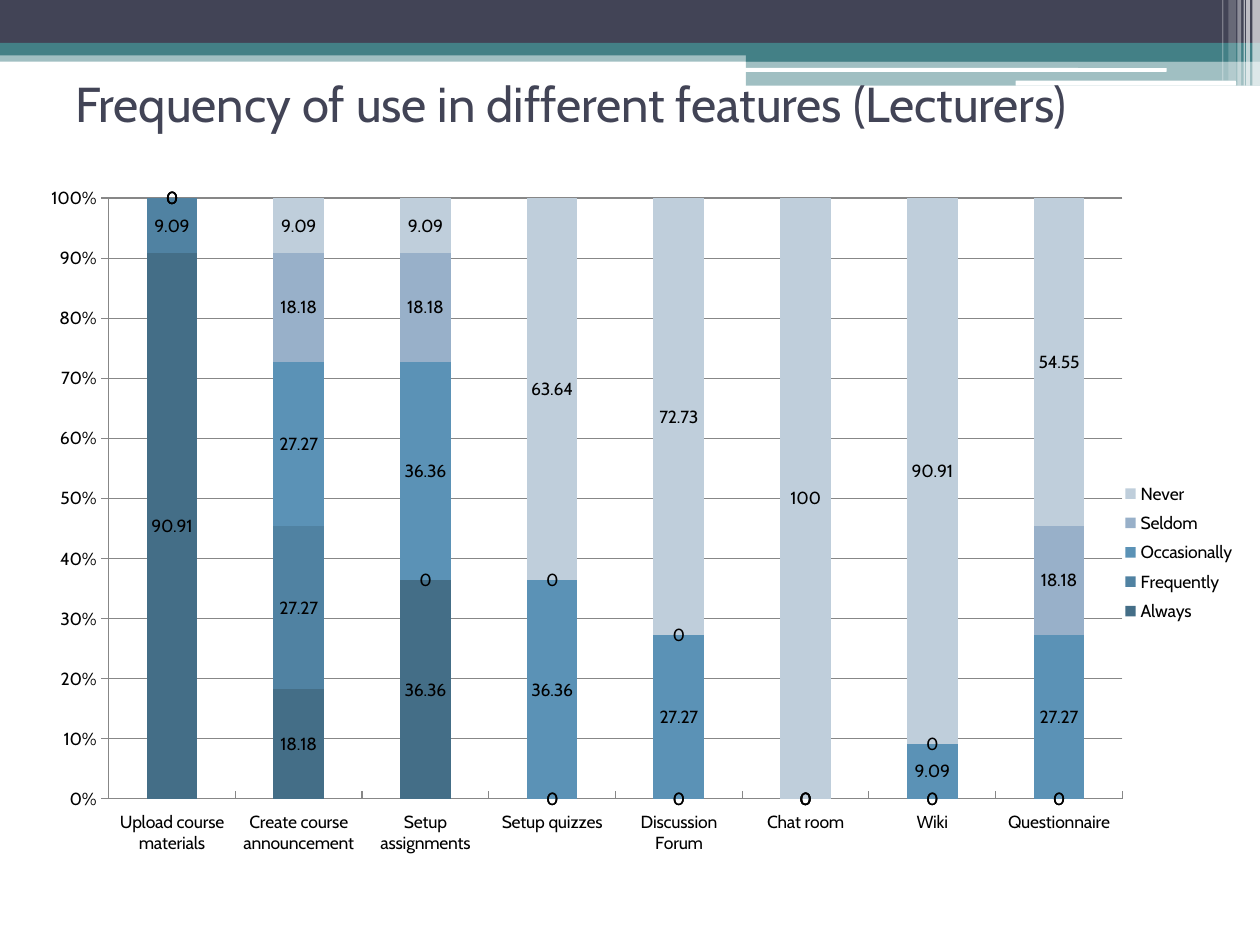
from collections import namedtuple

from lxml import etree
from pptx import Presentation
from pptx.chart.data import CategoryChartData
from pptx.dml.color import RGBColor
from pptx.enum.chart import (XL_CHART_TYPE, XL_LABEL_POSITION, XL_LEGEND_POSITION,
                             XL_TICK_LABEL_POSITION, XL_TICK_MARK)
from pptx.enum.shapes import MSO_SHAPE
from pptx.enum.text import MSO_ANCHOR
from pptx.oxml.ns import qn
from pptx.util import Inches, Pt

RECTANGLE, ROUNDED = MSO_SHAPE.RECTANGLE, MSO_SHAPE.ROUNDED_RECTANGLE
STACKED = XL_CHART_TYPE.COLUMN_STACKED_100
LEGEND_RIGHT = XL_LEGEND_POSITION.RIGHT
LABEL_CENTER = XL_LABEL_POSITION.CENTER
LABELS_LOW = XL_TICK_LABEL_POSITION.LOW
TICK_IN, TICK_OUT, TICK_NONE = XL_TICK_MARK.INSIDE, XL_TICK_MARK.OUTSIDE, XL_TICK_MARK.NONE
MIDDLE = MSO_ANCHOR.MIDDLE

# The slide is a grid of 1000 columns by 750 rows
COLUMNS, ROWS = 1000, 750
CELL = Inches(0.01)
FONT = "Cabin"
COLORS = {
    "navy": "424456", "teal": "438086", "white": "FFFFFF", "black": "000000", "line": "878787",
    "Always": "446E87", "Frequently": "5082A2", "Occasionally": "5B92B6",
    "Seldom": "98B0C9", "Never": "BFCEDB",
}
Box = namedtuple("Box", "left top width height")

CATEGORIES = ["Upload course materials", "Create course announcement", "Setup assignments",
              "Setup quizzes", "Discussion Forum", "Chat room", "Wiki", "Questionnaire"]
SERIES = {
    "Always": [90.91, 18.18, 36.36, 0, 0, 0, 0, 0],
    "Frequently": [9.09, 27.27, 0, 0, 0, 0, 0, 0],
    "Occasionally": [0, 27.27, 36.36, 36.36, 27.27, 0, 9.09, 27.27],
    "Seldom": [0, 18.18, 18.18, 0, 0, 0, 0, 18.18],
    "Never": [0, 9.09, 9.09, 63.64, 72.73, 100, 90.91, 54.55],
}


def color(name):
    return RGBColor.from_string(COLORS[name])


def set_attributes(target, values):
    for name, value in values.items():
        setattr(target, name, value)


def to_lengths(box):
    return [int(cells * CELL) for cells in box]


def add_bar(slide, box, fill, opacity=100, kind=RECTANGLE):
    shape = slide.shapes.add_shape(kind, *to_lengths(box))
    shape.shadow.inherit = False
    shape.line.fill.background()
    shape.fill.solid()
    shape.fill.fore_color.rgb = color(fill)
    if opacity < 100:
        fill_color = shape.fill._xPr.find(".//" + qn("a:srgbClr"))
        etree.SubElement(fill_color, qn("a:alpha"), val=str(opacity * 1000))


def add_header(slide, box):
    # Bands: left, top, width, height, colour, opacity, shape
    split = 592
    rest = box.width - split
    bands = [
        (0, 40, box.width, 9, "teal", 50, RECTANGLE),
        (0, 0, box.width, 34, "navy", 100, RECTANGLE),
        (0, 34, box.width, 10, "teal", 100, RECTANGLE),
        (split, 39, rest, 10, "teal", 100, RECTANGLE),
        (split, 48, rest, 20, "teal", 50, RECTANGLE),
        (591, 54, 335, 3, "white", 100, ROUNDED),
        (806, 64, 175, 4, "white", 100, ROUNDED),
    ]
    # Stripes at the right end: left, width, height, opacity
    stripes = [(994, 6, 68, 65), (989, 3, 68, 65), (987, 1, 68, 60),
               (982, 3, 68, 40), (975, 6, 64, 20), (970, 1, 64, 30)]
    bands += [(left, 0, width, height, "white", opacity, RECTANGLE)
              for left, width, height, opacity in stripes]
    for left, top, width, height, *style in bands:
        add_bar(slide, Box(box.left + left, box.top + top, width, height), *style)


def add_title(slide, box, text):
    frame = slide.shapes.add_textbox(*to_lengths(box)).text_frame
    set_attributes(frame, {"word_wrap": True, "vertical_anchor": MIDDLE})
    run = frame.paragraphs[0].add_run()
    run.text = text
    set_attributes(run.font, {"size": Pt(28), "name": FONT})
    run.font.color.rgb = color("navy")


def set_layout(parent, shares, inner=False):
    """Place a chart part by its left, top, width and height as shares of the chart."""
    for old in parent.findall(qn("c:layout")):
        parent.remove(old)
    layout = etree.Element(qn("c:layout"))
    manual = etree.SubElement(layout, qn("c:manualLayout"))
    settings = [("layoutTarget", "inner")] if inner else []
    settings += [("xMode", "edge"), ("yMode", "edge")]
    settings += zip("xywh", shares)
    for tag, value in settings:
        etree.SubElement(manual, qn("c:" + tag), val=str(value))
    parent.insert(0 if inner else 1, layout)


def add_frequency_chart(slide, box):
    data = CategoryChartData()
    data.categories = CATEGORIES
    for name, values in SERIES.items():
        data.add_series(name, values)
    chart = slide.shapes.add_chart(STACKED, *to_lengths(box), data).chart
    set_attributes(chart, {"has_title": False, "has_legend": True})
    set_attributes(chart.font, {"size": Pt(10), "name": FONT})
    chart.font.color.rgb = color("black")

    # Columns and their labels
    plot = chart.plots[0]
    set_attributes(plot, {"gap_width": 150, "overlap": 100, "vary_by_categories": False})
    for series in plot.series:
        series.format.fill.solid()
        series.format.fill.fore_color.rgb = color(series.name)
        set_attributes(series.data_labels, {"show_value": True, "position": LABEL_CENTER})

    # Axes and gridlines
    category_axis, value_axis = chart.category_axis, chart.value_axis
    set_attributes(category_axis, {"tick_label_position": LABELS_LOW,
                                   "major_tick_mark": TICK_IN, "minor_tick_mark": TICK_NONE})
    set_attributes(value_axis, {"major_tick_mark": TICK_OUT, "minor_tick_mark": TICK_NONE,
                                "has_major_gridlines": True, "minimum_scale": 0,
                                "maximum_scale": 1, "major_unit": 0.1})
    set_attributes(value_axis.tick_labels, {"number_format": "0%",
                                            "number_format_is_linked": False})
    for part in (category_axis, value_axis, value_axis.major_gridlines):
        part.format.line.color.rgb = color("line")
        part.format.line.width = Pt(0.75)

    # Legend and plot area
    set_attributes(chart.legend, {"position": LEGEND_RIGHT, "include_in_layout": True})
    set_layout(chart.legend._element, (0.9, 0.4, 0.1, 0.21))
    plot_area = chart._chartSpace.find(".//" + qn("c:plotArea"))
    set_layout(plot_area, (0.056, 0.026, 0.847, 0.812), inner=True)


def main():
    presentation = Presentation()
    presentation.slide_width, presentation.slide_height = COLUMNS * CELL, ROWS * CELL
    slide = presentation.slides.add_slide(presentation.slide_layouts[6])
    add_header(slide, Box(0, 0, COLUMNS, 68))
    add_title(slide, Box(50, 30, 900, 103), "Frequency of use in different features (Lecturers)")
    add_frequency_chart(slide, Box(33, 142, 950, 587))
    presentation.save("out.pptx")


if __name__ == "__main__":
    main()
